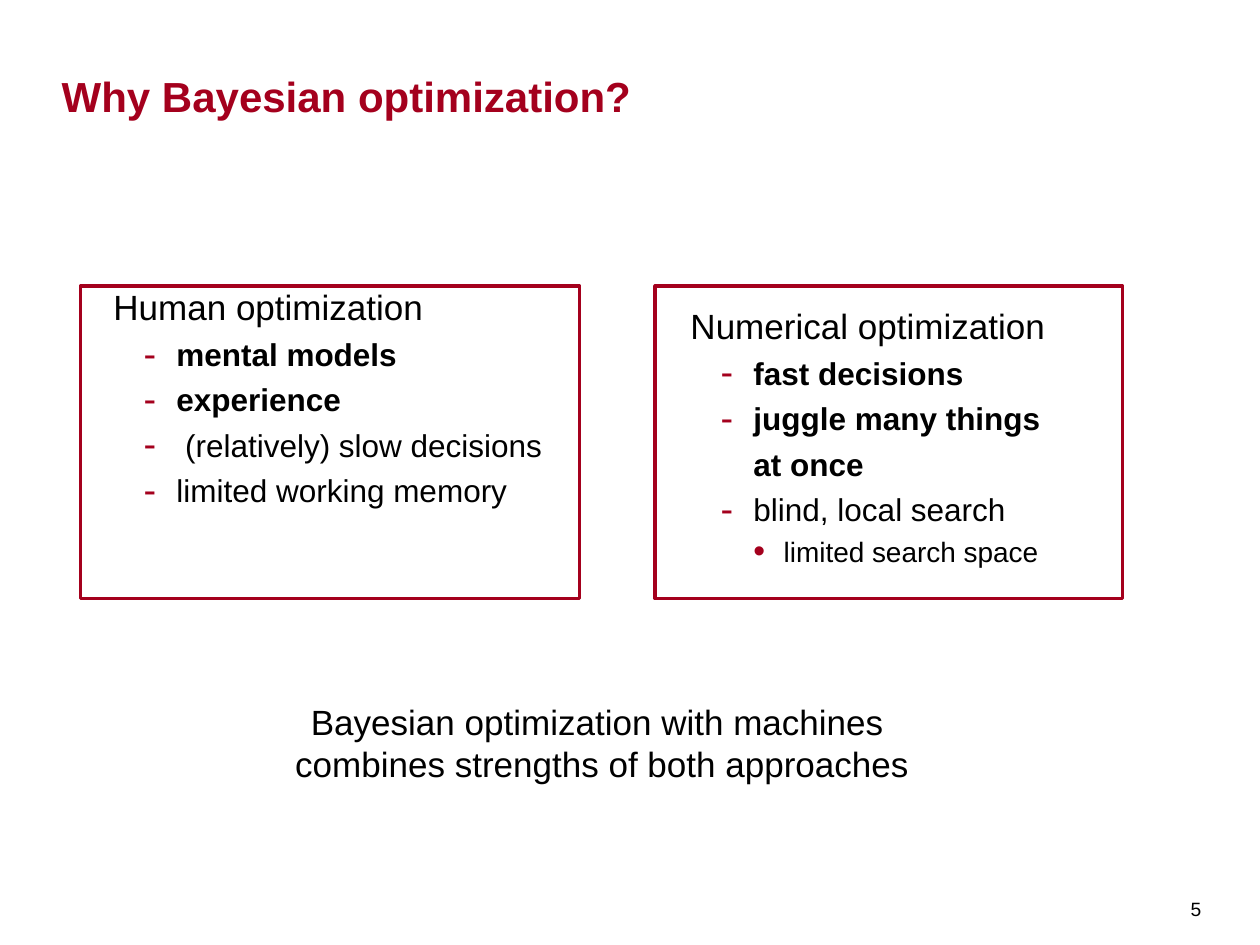
"""Build the slide on why Bayesian optimization is used."""
from dataclasses import dataclass

from lxml import etree
from pptx import Presentation
from pptx.dml.color import RGBColor
from pptx.enum import shapes, text
from pptx.oxml import ns
from pptx.util import Inches, Pt

RED, BLACK = "A4001D", "000000"


@dataclass
class Level:
    size: int
    margin: float = 0
    hang: float = 0
    bullet: str = ""
    spacing: float = 1.0


@dataclass
class Line:
    words: str
    level: Level
    bold: bool = False
    color: str = BLACK


@dataclass
class Frame:
    left: float
    top: float
    width: float
    height: float
    insets: tuple = (0, 0, 0, 0)
    anchor: text.MSO_ANCHOR = text.MSO_ANCHOR.TOP
    align: text.PP_ALIGN = text.PP_ALIGN.LEFT

    def lengths(self) -> list:
        return [Inches(n) for n in (self.left, self.top, self.width, self.height)]


HEADING = Level(20, 0.26, spacing=1.2)
ITEM = Level(18, 0.76, -0.26, "-", 1.2)
SUBITEM = Level(16, 1, -0.24, "•", 1.2)
TITLE, CONCLUSION, NUMBER = Level(24), Level(20), Level(11)

HUMAN = [
    Line("Human optimization", HEADING),
    Line("mental models", ITEM, True),
    Line("experience", ITEM, True),
    Line(" (relatively) slow decisions", ITEM),
    Line("limited working memory", ITEM),
]
NUMERICAL = [
    Line("Numerical optimization", HEADING),
    Line("fast decisions", ITEM, True),
    Line("juggle many things \vat once", ITEM, True),
    Line("blind, local search", ITEM),
    Line("limited search space", SUBITEM),
]
TEXTS = [
    (Frame(9.37, 6.91, 0.35, 0.59, (0.08, 0.06, 0.08, 0.05), text.MSO_ANCHOR.MIDDLE),
     [Line("5", NUMBER)]),
    (Frame(0.49, 0.14, 8.86, 0.82, anchor=text.MSO_ANCHOR.BOTTOM),
     [Line("Why Bayesian optimization?", TITLE, True, RED)]),
    (Frame(0.64, 2.2, 5.24, 2.55), HUMAN),
    (Frame(5.22, 2.35, 3.62, 2.4), NUMERICAL),
    (Frame(0.33, 5.51, 8.9, 0.77, (0.1, 0.05, 0.1, 0.05), align=text.PP_ALIGN.CENTER),
     [Line("Bayesian optimization with machines \vcombines strengths of both approaches",
           CONCLUSION)]),
]
OUTLINES = [Frame(0.64, 2.27, 3.96, 2.48), Frame(5.2, 2.27, 3.71, 2.48)]


def rgb(value: str) -> RGBColor:
    """Turn a hex string into a colour."""
    return RGBColor.from_string(value)


def apply(target, values: dict) -> None:
    """Set every named value on the target."""
    for name, value in values.items():
        setattr(target, name, value)


def set_bullet(para, level: Level) -> None:
    """Give a paragraph its indents and its red bullet."""
    props = para._p.get_or_add_pPr()
    props.set("marL", str(Inches(level.margin)))
    props.set("indent", str(Inches(level.hang)))
    if not level.bullet:
        return
    color = etree.SubElement(props, ns.qn("a:buClr"))
    etree.SubElement(color, ns.qn("a:srgbClr"), val=RED)
    etree.SubElement(props, ns.qn("a:buSzPct"), val="120000")
    etree.SubElement(props, ns.qn("a:buFont"), typeface="Arial")
    etree.SubElement(props, ns.qn("a:buChar"), char=level.bullet)


def add_text(page, frame: Frame, lines: list[Line]) -> None:
    """Add a text box holding one paragraph per line."""
    body = page.shapes.add_textbox(*frame.lengths()).text_frame
    sides = ("margin_left", "margin_top", "margin_right", "margin_bottom")
    margins = dict(zip(sides, map(Inches, frame.insets)))
    apply(body, {"word_wrap": True, "vertical_anchor": frame.anchor, **margins})
    for index, line in enumerate(lines):
        para = body.add_paragraph() if index else body.paragraphs[0]
        set_bullet(para, line.level)
        apply(para, {"text": line.words, "alignment": frame.align,
                     "line_spacing": line.level.spacing})
        for span in para.runs:
            apply(span.font, {"name": "Arial", "size": Pt(line.level.size),
                              "bold": line.bold})
            span.font.color.rgb = rgb(line.color)


def add_outline(page, frame: Frame) -> None:
    """Add an unfilled red rectangle."""
    box = page.shapes.add_shape(shapes.MSO_SHAPE.RECTANGLE, *frame.lengths())
    box.shadow.inherit = False
    box.fill.background()
    box.line.color.rgb = rgb(RED)
    box.line.width = Pt(2)


def main() -> None:
    """Build and save the deck."""
    deck = Presentation()
    apply(deck, {"slide_width": Inches(10), "slide_height": Inches(7.5)})
    page = deck.slides.add_slide(deck.slide_layouts[6])
    for frame, lines in TEXTS:
        add_text(page, frame, lines)
    for frame in OUTLINES:
        add_outline(page, frame)
    deck.save("out.pptx")


if __name__ == "__main__":
    main()
